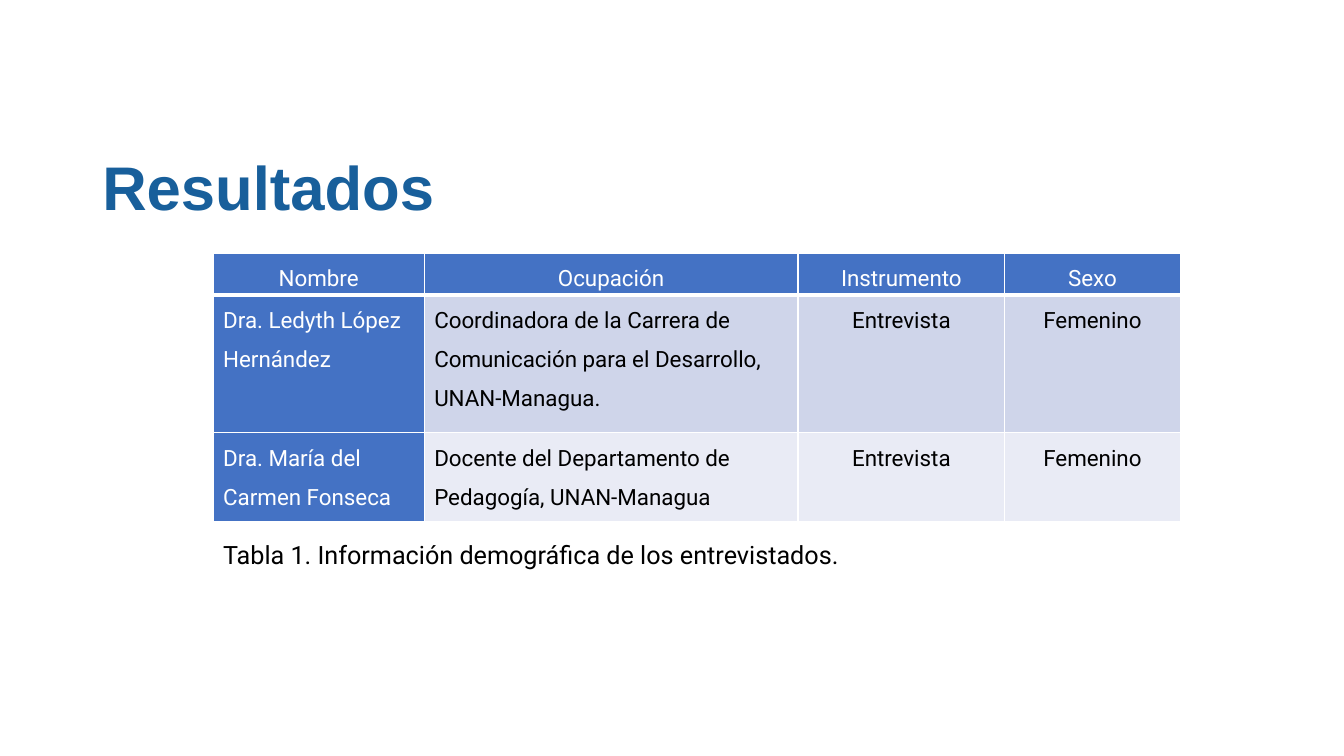
from lxml.etree import SubElement
from pptx import Presentation
from pptx.dml.color import RGBColor
from pptx.enum.text import MSO_ANCHOR as Anchor, PP_ALIGN as Align
from pptx.oxml.ns import qn
from pptx.util import Emu, Pt

PX = 9525  # 96 px to the inch
TITLE_BLUE = RGBColor(0x18, 0x5F, 0x9B)
TABLE_BLUE = RGBColor(0x44, 0x72, 0xC4)
BAND_DARK = RGBColor(0xCF, 0xD5, 0xEA)
BAND_LIGHT = RGBColor(0xE9, 0xEB, 0xF5)
WHITE = RGBColor(0xFF, 0xFF, 0xFF)
BLACK = RGBColor(0, 0, 0)

COLUMN_WIDTHS = [201, 356, 197, 167]
ROW_HEIGHTS = [40, 131, 85]
INTERVIEWEES = [
    ["Nombre", "Ocupación", "Instrumento", "Sexo"],
    ["Dra. Ledyth López Hernández",
     "Coordinadora de la Carrera de Comunicación para el Desarrollo, UNAN-Managua.",
     "Entrevista", "Femenino"],
    ["Dra. María del Carmen Fonseca",
     "Docente del Departamento de Pedagogía, UNAN-Managua",
     "Entrevista", "Femenino"],
]


def px(length):
    return Emu(length * PX)


def style_text(para, font_name, size, color, bold=False):
    for span in para.runs:
        span.font.name = font_name
        span.font.size = Pt(size)
        span.font.bold = bold
        span.font.color.rgb = color


def add_text(page, box, text, anchor):
    frame = page.shapes.add_textbox(*map(px, box)).text_frame
    frame.word_wrap = True
    frame.vertical_anchor = anchor
    frame.text = text
    return frame.paragraphs[0]


def add_title(page, box):
    para = add_text(page, box, "Resultados", Anchor.MIDDLE)
    para.line_spacing = 0.9
    style_text(para, "Arial", 44, TITLE_BLUE, bold=True)


def add_caption(page, box):
    para = add_text(page, box, "Tabla 1. Información demográfica de los entrevistados.",
                    Anchor.TOP)
    style_text(para, "Roboto", 18, BLACK)


def set_borders(cell, bottom_points):
    """Draw white cell borders, 1 pt wide except for the bottom one."""
    properties = cell._tc.get_or_add_tcPr()
    widths = {"a:lnL": 1, "a:lnR": 1, "a:lnT": 1, "a:lnB": bottom_points}
    for position, (side, points) in enumerate(widths.items()):
        line = SubElement(properties, qn(side), w=str(Pt(points)))
        fill = SubElement(line, qn("a:solidFill"))
        SubElement(fill, qn("a:srgbClr"), val=str(WHITE))
        properties.insert(position, line)


def fill_cell(cell, text, row, column):
    is_heading = row == 0 or column == 0
    cell.text = text
    cell.margin_top = cell.margin_bottom = 0
    cell.fill.solid()
    band = BAND_DARK if row % 2 else BAND_LIGHT
    cell.fill.fore_color.rgb = TABLE_BLUE if is_heading else band
    set_borders(cell, 3 if row == 0 else 1)
    para = cell.text_frame.paragraphs[0]
    para.alignment = Align.CENTER if row == 0 or column > 1 else Align.LEFT
    para.line_spacing = 1.5
    para.space_after = Pt(12)
    style_text(para, "Roboto", 16, WHITE if is_heading else BLACK)


def add_interviewee_table(page, left, top):
    box = (left, top, sum(COLUMN_WIDTHS), sum(ROW_HEIGHTS))
    table = page.shapes.add_table(len(ROW_HEIGHTS), len(COLUMN_WIDTHS),
                                  *map(px, box)).table
    for column, width in zip(table.columns, COLUMN_WIDTHS):
        column.width = px(width)
    for row, height in zip(table.rows, ROW_HEIGHTS):
        row.height = px(height)
    for row, texts in enumerate(INTERVIEWEES):
        for column, text in enumerate(texts):
            fill_cell(table.cell(row, column), text, row, column)


def main():
    deck = Presentation()
    deck.slide_width, deck.slide_height = px(1280), px(720)
    page = deck.slides.add_slide(deck.slide_layouts[6])
    add_title(page, (88, 134, 1104, 95))
    add_interviewee_table(page, 203, 241)
    add_caption(page, (203, 509, 639, 38))
    deck.save("out.pptx")


if __name__ == "__main__":
    main()
